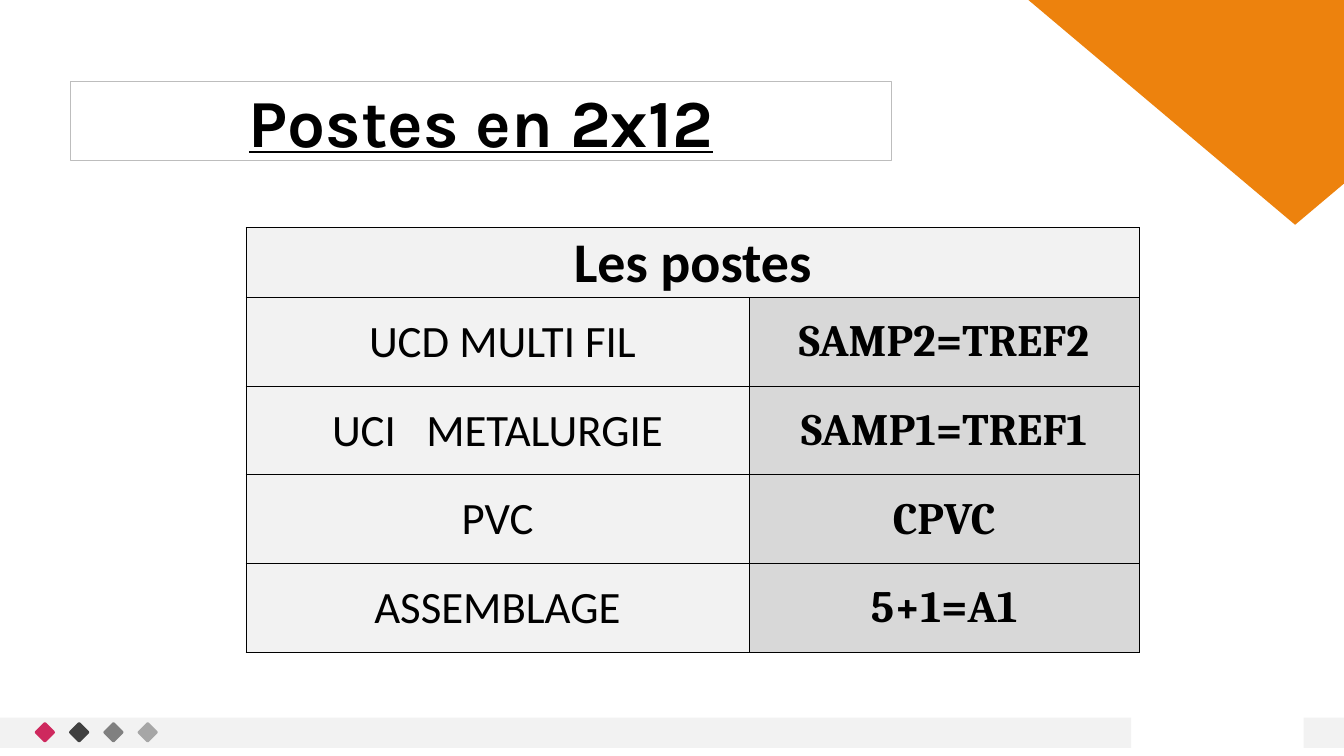
from dataclasses import dataclass

from lxml import etree
from pptx import Presentation
from pptx import util as u
from pptx.dml.color import RGBColor
from pptx.enum import shapes, text
from pptx.oxml.ns import qn

PX = 9144  # EMU per px, 100 px to the inch


@dataclass(frozen=True)
class Theme:
    ink: str = "000000"
    frame: str = "BDBDBD"
    pale: str = "F2F2F2"
    code_fill: str = "D8D8D8"
    accent: str = "ED820D"
    dots: tuple = ("CE295E", "404040", "808080", "A6A6A6")
    title_font: str = "Karla"
    body_font: str = "Calibri"
    code_font: str = "Cambria"
    title_size: int = 48
    header_size: int = 40
    cell_size: int = 32


THEME = Theme()

POSTS = [
    (" UCD MULTI FIL", "SAMP2=TREF2"),
    ("UCI   METALURGIE", "SAMP1=TREF1"),
    ("PVC", "CPVC"),
    ("ASSEMBLAGE", "5+1=A1"),
]


def px(value):
    return u.Emu(value * PX)


def rgb(color):
    return RGBColor.from_string(color)


def write(frame, words, font, size, bold=False, underline=False):
    """Put one centred run into a text frame."""
    para = frame.paragraphs[0]
    para.alignment = text.PP_ALIGN.CENTER
    span = para.add_run()
    span.text = words
    span.font.name = font
    span.font.size = u.Pt(size)
    span.font.bold = bold
    span.font.underline = underline
    span.font.color.rgb = rgb(THEME.ink)


def add_block(slide, kind, left, top, width, height, color):
    """Add a filled preset shape without outline or shadow."""
    shape = slide.shapes.add_shape(kind, px(left), px(top), px(width), px(height))
    shape.shadow.inherit = False
    shape.fill.solid()
    shape.fill.fore_color.rgb = rgb(color)
    shape.line.fill.background()
    return shape


def add_footer(slide):
    """Grey band in two pieces with a row of small rounded diamonds."""
    rectangle = shapes.MSO_SHAPE.RECTANGLE
    for left, width in ((0, 1122), (1293, 40)):
        add_block(slide, rectangle, left, 712, width, 30, THEME.pale)
    for index, color in enumerate(THEME.dots):
        dot = add_block(slide, shapes.MSO_SHAPE.ROUNDED_RECTANGLE,
                        37 + 34 * index, 719, 15, 15, color)
        dot.adjustments[0] = 0.11
        dot.rotation = 45


def set_title(slide, words):
    title = slide.shapes.title
    title.left, title.top, title.width, title.height = map(px, (70, 81, 814, 78))
    title.line.color.rgb = rgb(THEME.frame)
    title.line.width = u.Pt(1)
    frame = title.text_frame
    frame.auto_size = text.MSO_AUTO_SIZE.NONE
    frame.vertical_anchor = text.MSO_ANCHOR.MIDDLE
    write(frame, words, THEME.title_font, THEME.title_size, bold=True, underline=True)


def set_borders(cell):
    properties = cell._tc.get_or_add_tcPr()
    for side in ("a:lnL", "a:lnR", "a:lnT", "a:lnB"):
        line = etree.SubElement(properties, qn(side), w=str(u.Pt(0.5)))
        fill = etree.SubElement(line, qn("a:solidFill"))
        etree.SubElement(fill, qn("a:srgbClr"), val=THEME.ink)


def style_cell(cell, color):
    cell.margin_left = cell.margin_right = cell.margin_top = px(1)
    cell.margin_bottom = 0
    cell.vertical_anchor = text.MSO_ANCHOR.MIDDLE
    set_borders(cell)
    cell.fill.solid()
    cell.fill.fore_color.rgb = rgb(color)


def add_posts_table(slide, heading, posts):
    widths, heights = (499, 387), [69] + [88] * len(posts)
    table = slide.shapes.add_table(
        len(heights), len(widths), px(244), px(226),
        px(sum(widths)), px(sum(heights))).table
    table.first_row = table.horz_banding = False
    for column, width in zip(table.columns, widths):
        column.width = px(width)
    for row, height in zip(table.rows, heights):
        row.height = px(height)

    # Heading across both columns
    for cell in table.rows[0].cells:
        style_cell(cell, THEME.pale)
    table.cell(0, 0).merge(table.cell(0, 1))
    write(table.cell(0, 0).text_frame, heading, THEME.body_font,
          THEME.header_size, bold=True)

    # One row per post: name, then code
    for index, (name, code) in enumerate(posts, start=1):
        name_cell, code_cell = table.rows[index].cells
        style_cell(name_cell, THEME.pale)
        write(name_cell.text_frame, name, THEME.body_font, THEME.cell_size)
        style_cell(code_cell, THEME.code_fill)
        write(code_cell.text_frame, code, THEME.code_font, THEME.cell_size, bold=True)


def main():
    deck = Presentation()
    deck.slide_width, deck.slide_height = px(1333), px(750)
    slide = deck.slides.add_slide(deck.slide_layouts.get_by_name("Title Only"))

    add_footer(slide)
    # Corner diamond, running off the top right
    add_block(slide, shapes.MSO_SHAPE.DIAMOND, 1020, -223, 529, 446, THEME.accent)
    set_title(slide, "Postes en 2x12")
    add_posts_table(slide, "Les postes", POSTS)

    deck.save("out.pptx")


if __name__ == "__main__":
    main()
